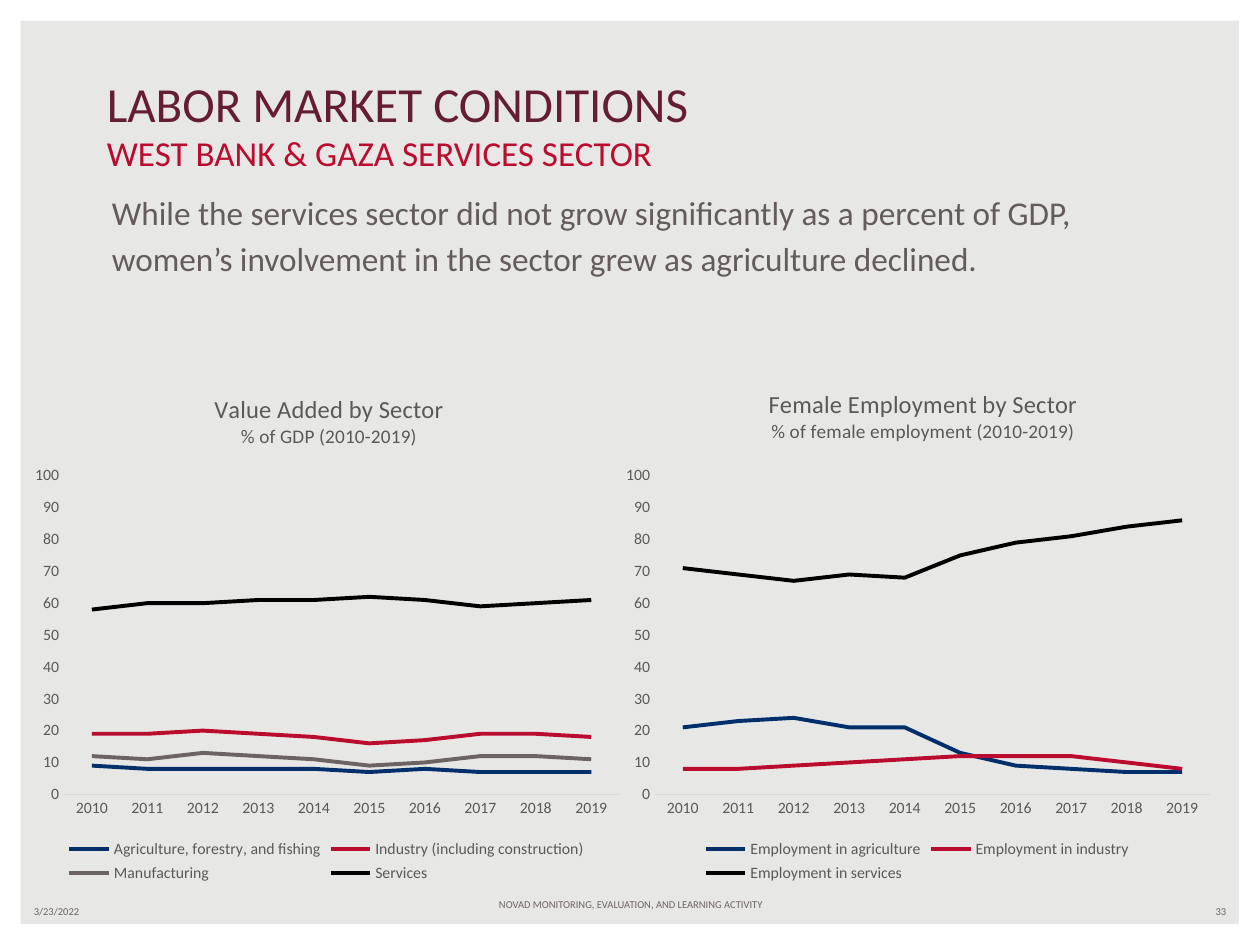
from dataclasses import dataclass

from lxml import etree
from pptx import Presentation
from pptx import util as u
from pptx.chart.data import CategoryChartData
from pptx.dml.color import RGBColor
from pptx.enum import chart as charts, shapes, text
from pptx.oxml.ns import qn

WHITE = RGBColor(0xFF, 0xFF, 0xFF)
BLACK = RGBColor(0x00, 0x00, 0x00)
PAPER = RGBColor(0xE7, 0xE7, 0xE5)
WINE = RGBColor(0x65, 0x1D, 0x32)
RED = RGBColor(0xBA, 0x0C, 0x2F)
NAVY = RGBColor(0x00, 0x2F, 0x6C)
WARM_GRAY = RGBColor(0x6C, 0x64, 0x63)
BODY_GRAY = RGBColor(0x63, 0x5C, 0x5B)
LABEL_GRAY = RGBColor(0x59, 0x59, 0x59)
AXIS_GRAY = RGBColor(0xD9, 0xD9, 0xD9)

FONT = "Calibri"
SLIDE_WIDTH = u.Inches(10)
SLIDE_HEIGHT = u.Inches(7.5)
YEARS = [str(year) for year in range(2010, 2020)]
PLOT_LAYOUT = {"x": 0.07, "y": 0.2, "w": 0.91, "h": 0.62}


@dataclass(frozen=True)
class Area:
    left: float
    top: float
    width: float
    height: float

    def box(self) -> tuple:
        return (
            u.Emu(int(SLIDE_WIDTH * self.left / 100)),
            u.Emu(int(SLIDE_HEIGHT * self.top / 100)),
            u.Emu(int(SLIDE_WIDTH * self.width / 100)),
            u.Emu(int(SLIDE_HEIGHT * self.height / 100)),
        )


@dataclass(frozen=True)
class Line:
    words: str
    size: float
    color: RGBColor


@dataclass(frozen=True)
class TextBlock:
    area: Area
    lines: tuple
    anchor: text.MSO_ANCHOR
    align: text.PP_ALIGN = text.PP_ALIGN.LEFT
    spacing: float = 1.0


@dataclass(frozen=True)
class Series:
    name: str
    color: RGBColor
    values: tuple


@dataclass(frozen=True)
class SectorChart:
    area: Area
    title: str
    subtitle: str
    title_layout: dict
    series: tuple


FOOTER_ROW = {"top": 95.07, "width": 23.3, "height": 2.67}
CHART_ROW = {"top": 39.47, "width": 48.4, "height": 54.4}

TEXT_BLOCKS = (
    TextBlock(
        Area(34.2, 94.4, 31.7, 4),
        (Line("NOVAD MONITORING, EVALUATION, AND LEARNING ACTIVITY", 6, WARM_GRAY),),
        text.MSO_ANCHOR.TOP, text.PP_ALIGN.CENTER,
    ),
    TextBlock(Area(left=75, **FOOTER_ROW), (Line("33", 6, WARM_GRAY),),
              text.MSO_ANCHOR.MIDDLE, text.PP_ALIGN.RIGHT),
    TextBlock(
        Area(7.5, 6.93, 85, 12.13),
        (Line("LABOR MARKET CONDITIONS", 28, WINE),
         Line("WEST BANK & GAZA SERVICES SECTOR", 20, RED)),
        text.MSO_ANCHOR.BOTTOM,
    ),
    TextBlock(
        Area(7.9, 19.07, 84.1, 19.2),
        (Line("While the services sector did not grow significantly as a percent of GDP, "
              "women’s involvement in the sector grew as agriculture declined.", 19, BODY_GRAY),),
        text.MSO_ANCHOR.TOP, spacing=1.15,
    ),
    TextBlock(Area(left=1.7, **FOOTER_ROW), (Line("3/23/2022", 6, WARM_GRAY),),
              text.MSO_ANCHOR.MIDDLE),
)

SECTOR_CHARTS = (
    SectorChart(
        Area(left=1.7, **CHART_ROW), "Value Added by Sector", "% of GDP (2010-2019)",
        {"x": 0.31, "y": 0.03},
        (
            Series("Agriculture, forestry, and fishing", NAVY, (9, 8, 8, 8, 8, 7, 8, 7, 7, 7)),
            Series("Industry (including construction)", RED,
                   (19, 19, 20, 19, 18, 16, 17, 19, 19, 18)),
            Series("Manufacturing", WARM_GRAY, (12, 11, 13, 12, 11, 9, 10, 12, 12, 11)),
            Series("Services", BLACK, (58, 60, 60, 61, 61, 62, 61, 59, 60, 61)),
        ),
    ),
    SectorChart(
        Area(left=48.6, **CHART_ROW), "Female Employment by Sector",
        "% of female employment (2010-2019)", {"x": 0.25, "y": 0.02},
        (
            Series("Employment in agriculture", NAVY, (21, 23, 24, 21, 21, 13, 9, 8, 7, 7)),
            Series("Employment in industry", RED, (8, 8, 9, 10, 11, 12, 12, 12, 10, 8)),
            Series("Employment in services", BLACK, (71, 69, 67, 69, 68, 75, 79, 81, 84, 86)),
        ),
    ),
)


def apply(target, values: dict) -> None:
    for name, value in values.items():
        setattr(target, name, value)


def style_font(font, size: float, color: RGBColor) -> None:
    apply(font, {"name": FONT, "size": u.Pt(size), "bold": False})
    font.color.rgb = color


def write_lines(paragraph, lines: tuple) -> None:
    for index, line in enumerate(lines):
        if index:
            paragraph.add_line_break()
        run = paragraph.add_run()
        run.text = line.words
        style_font(run.font, line.size, line.color)


def add_frame(slide) -> None:
    shape = slide.shapes.add_shape(shapes.MSO_SHAPE.FRAME, *Area(0, 0, 100, 100).box())
    shape.adjustments[0] = 0.022
    shape.shadow.inherit = False
    shape.fill.solid()
    shape.fill.fore_color.rgb = WHITE
    shape.line.fill.background()


def add_text(slide, block: TextBlock) -> None:
    frame = slide.shapes.add_textbox(*block.area.box()).text_frame
    apply(frame, {"word_wrap": True, "vertical_anchor": block.anchor})
    paragraph = frame.paragraphs[0]
    apply(paragraph, {"alignment": block.align, "line_spacing": block.spacing})
    write_lines(paragraph, block.lines)


def set_layout(parent, position: int, values: dict) -> None:
    for previous in parent.findall(qn("c:layout")):
        parent.remove(previous)
    layout = etree.Element(qn("c:layout"))
    parent.insert(position, layout)
    manual = etree.SubElement(layout, qn("c:manualLayout"))
    if "w" in values:
        etree.SubElement(manual, qn("c:layoutTarget"), val="inner")
    for name in ("x", "y"):
        etree.SubElement(manual, qn(f"c:{name}Mode"), val="edge")
    for name, value in values.items():
        etree.SubElement(manual, qn(f"c:{name}"), val=str(value))


def add_sector_chart(slide, sector: SectorChart) -> None:
    data = CategoryChartData(number_format="0")
    data.categories = YEARS
    for series in sector.series:
        data.add_series(series.name, series.values)
    chart = slide.shapes.add_chart(charts.XL_CHART_TYPE.LINE, *sector.area.box(), data).chart
    style_font(chart.font, 10, BLACK)

    write_lines(chart.chart_title.text_frame.paragraphs[0],
                (Line(sector.title, 14, LABEL_GRAY), Line(sector.subtitle, 11, LABEL_GRAY)))
    set_layout(chart.chart_title._element, 1, sector.title_layout)
    set_layout(chart._chartSpace.chart.plotArea, 0, PLOT_LAYOUT)

    chart.has_legend = True
    apply(chart.legend, {"position": charts.XL_LEGEND_POSITION.BOTTOM, "include_in_layout": False})
    style_font(chart.legend.font, 9, LABEL_GRAY)

    for axis in (chart.category_axis, chart.value_axis):
        apply(axis, {"has_major_gridlines": False,
                     "major_tick_mark": charts.XL_TICK_MARK.NONE,
                     "minor_tick_mark": charts.XL_TICK_MARK.NONE})
        style_font(axis.tick_labels.font, 9, LABEL_GRAY)
    chart.category_axis.format.line.color.rgb = AXIS_GRAY
    chart.category_axis.format.line.width = u.Pt(0.75)
    apply(chart.value_axis, {"minimum_scale": 0, "maximum_scale": 100, "major_unit": 10})
    apply(chart.value_axis.tick_labels, {"number_format": "0", "number_format_is_linked": False})
    chart.value_axis.format.line.fill.background()

    plot = chart.plots[0]
    plot.vary_by_categories = False
    for drawn, series in zip(plot.series, sector.series):
        drawn.smooth = False
        drawn.format.line.color.rgb = series.color
        drawn.format.line.width = u.Pt(2.25)


def main() -> None:
    presentation = Presentation()
    apply(presentation, {"slide_width": SLIDE_WIDTH, "slide_height": SLIDE_HEIGHT})
    slide = presentation.slides.add_slide(presentation.slide_layouts[6])
    slide.background.fill.solid()
    slide.background.fill.fore_color.rgb = PAPER
    add_frame(slide)
    for block in TEXT_BLOCKS:
        add_text(slide, block)
    for sector in SECTOR_CHARTS:
        add_sector_chart(slide, sector)
    presentation.save("out.pptx")


if __name__ == "__main__":
    main()
